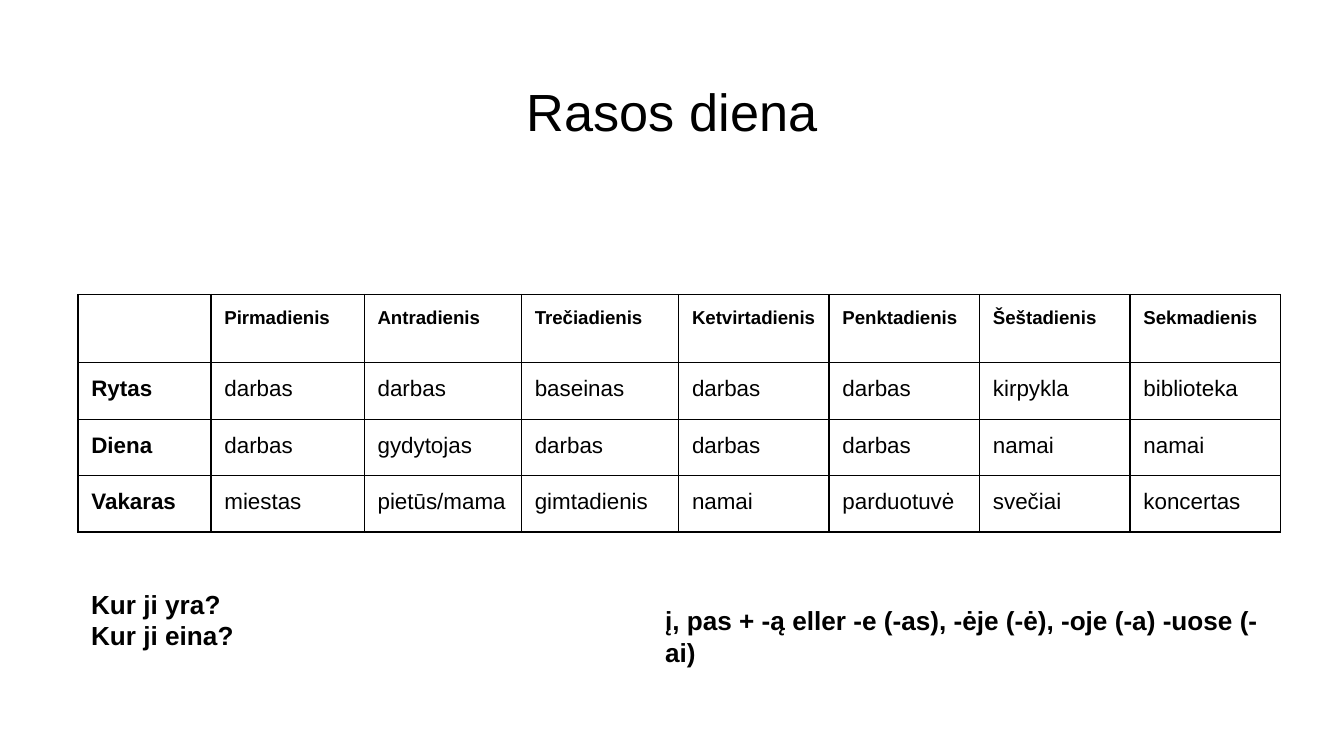
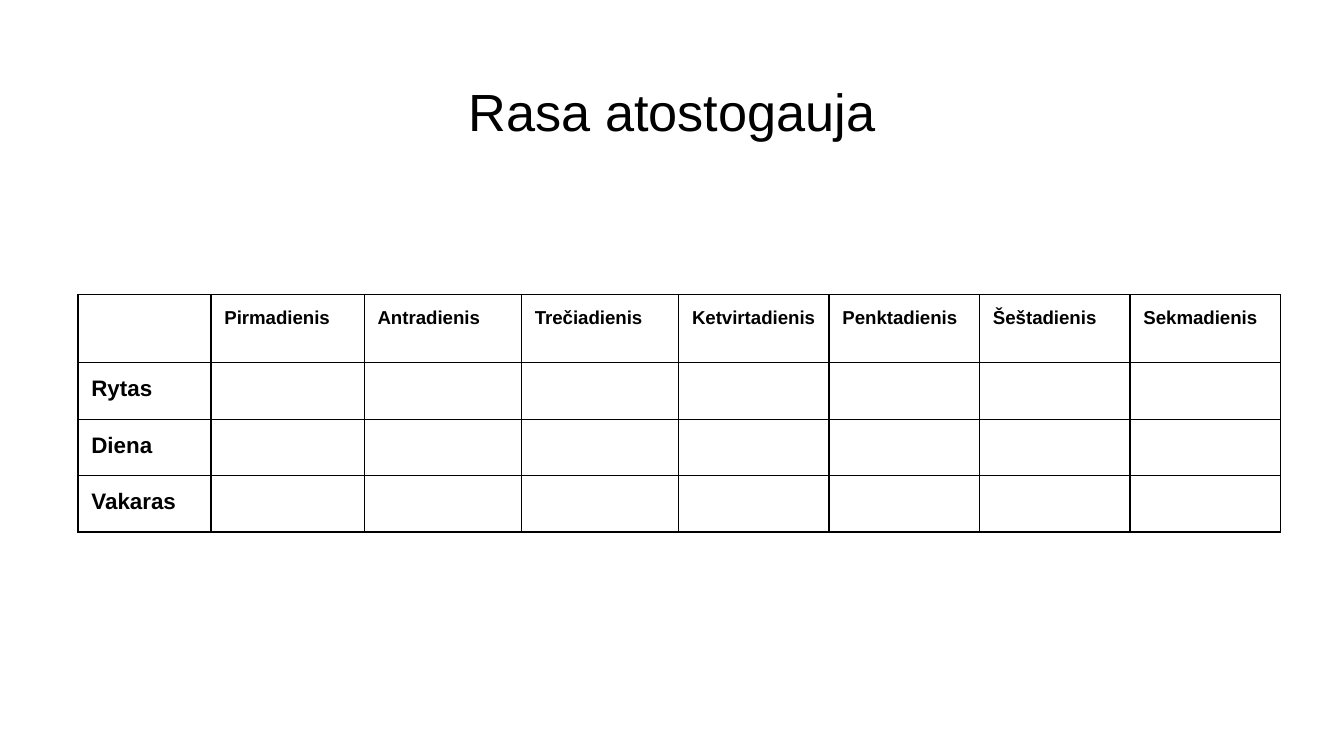
import dataclasses

import lxml.etree
import pptx
import pptx.dml.color
import pptx.enum.text
import pptx.oxml.ns
import pptx.util

Inches = pptx.util.Inches


@dataclasses.dataclass(frozen=True)
class Theme:
    font: str = "Arial"
    ink: str = "000000"
    title_size: int = 28
    question_size: int = 14
    day_size: int = 10
    cell_size: int = 12
    corner_size: int = 18
    border_width: float = 0.75
    inset: float = 0.1


THEME = Theme()

TITLE_BOX = (0.34, 0.49, 9.32, 0.63)
TABLE_BOX = (0.58, 2.19, 8.94, 1.78)
QUESTIONS_BOX = (0.58, 4.33, 8.94, 0.57)
ENDINGS_BOX = (4.85, 4.45, 4.81, 0.34)

COLUMN_WIDTHS = [0.99, 1.14, 1.17, 1.17] + [1.12] * 4
ROW_HEIGHTS = [0.51] + [0.42] * 3

DAYS = ["Pirmadienis", "Antradienis", "Trečiadienis", "Ketvirtadienis",
        "Penktadienis", "Šeštadienis", "Sekmadienis"]
TIMES = ["Rytas", "Diena", "Vakaras"]
WORK_WEEK = [
    ["darbas", "darbas", "baseinas", "darbas", "darbas", "kirpykla", "biblioteka"],
    ["darbas", "gydytojas", "darbas", "darbas", "darbas", "namai", "namai"],
    ["miestas", "pietūs/mama", "gimtadienis", "namai", "parduotuvė", "svečiai",
     "koncertas"],
]
EMPTY_WEEK = [[""] * len(DAYS) for _ in TIMES]


def format_paragraph(paragraph, size, bold=False):
    for run in paragraph.runs:
        run.font.name = THEME.font
        run.font.size = pptx.util.Pt(size)
        run.font.bold = bold
        run.font.color.rgb = pptx.dml.color.RGBColor.from_string(THEME.ink)


def set_insets(holder):
    holder.margin_left = holder.margin_right = Inches(THEME.inset)
    holder.margin_top = holder.margin_bottom = Inches(THEME.inset)


def add_text(slide, box, text, size, bold=False):
    shape = slide.shapes.add_textbox(*map(Inches, box))
    text_frame = shape.text_frame
    text_frame.word_wrap = True
    text_frame.text = text
    for paragraph in text_frame.paragraphs:
        format_paragraph(paragraph, size, bold)
    return text_frame


def add_title(slide, box, text):
    text_frame = add_text(slide, box, text, THEME.title_size)
    set_insets(text_frame)
    text_frame.paragraphs[0].alignment = pptx.enum.text.PP_ALIGN.CENTER


def add_question(slide, box, text):
    text_frame = add_text(slide, box, text, THEME.question_size, bold=True)
    text_frame.auto_size = pptx.enum.text.MSO_AUTO_SIZE.SHAPE_TO_FIT_TEXT


def add_borders(cell):
    properties = cell._tc.get_or_add_tcPr()
    qn = pptx.oxml.ns.qn
    for side in ("a:lnL", "a:lnR", "a:lnT", "a:lnB"):
        line = lxml.etree.SubElement(
            properties, qn(side), w=str(pptx.util.Pt(THEME.border_width)))
        fill = lxml.etree.SubElement(line, qn("a:solidFill"))
        lxml.etree.SubElement(fill, qn("a:srgbClr"), val=THEME.ink)


def fill_cell(cell, text, size, bold):
    set_insets(cell)
    add_borders(cell)
    cell.fill.background()
    paragraph = cell.text_frame.paragraphs[0]
    if text:
        paragraph.text = text
        format_paragraph(paragraph, size, bold)
    else:
        # An empty cell keeps its type size, so the row does not grow
        lxml.etree.SubElement(paragraph._p, pptx.oxml.ns.qn("a:endParaRPr"),
                              sz=str(size * 100))


def add_week_table(slide, box, activities):
    rows = [[""] + DAYS]
    rows += [[time] + week for time, week in zip(TIMES, activities)]
    frame = slide.shapes.add_table(len(rows), len(rows[0]), *map(Inches, box))
    table = frame.table
    table.first_row = table.horz_banding = False
    for column, width in zip(table.columns, COLUMN_WIDTHS):
        column.width = Inches(width)
    for row, height in zip(table.rows, ROW_HEIGHTS):
        row.height = Inches(height)
    for row_index, texts in enumerate(rows):
        for column_index, text in enumerate(texts):
            if row_index:
                size = THEME.cell_size
            else:
                size = THEME.day_size if column_index else THEME.corner_size
            is_heading = row_index == 0 or column_index == 0
            fill_cell(table.cell(row_index, column_index), text, size, is_heading)


def add_week_slide(presentation, title, activities):
    slide = presentation.slides.add_slide(presentation.slide_layouts[6])
    add_title(slide, TITLE_BOX, title)
    add_week_table(slide, TABLE_BOX, activities)
    return slide


def main():
    presentation = pptx.Presentation()
    # Widescreen, 16 to 9
    presentation.slide_width = Inches(10)
    presentation.slide_height = Inches(10 * 9 / 16)

    # The working week, with questions and case endings below
    slide = add_week_slide(presentation, "Rasos diena", WORK_WEEK)
    add_question(slide, QUESTIONS_BOX, "Kur ji yra?\nKur ji eina?")
    add_question(slide, ENDINGS_BOX,
                 "į, pas + -ą eller -e (-as), -ėje (-ė), -oje (-a) -uose (-ai)")

    # The holiday week, left for the pupils to fill in
    add_week_slide(presentation, "Rasa atostogauja", EMPTY_WEEK)

    presentation.save("out.pptx")


if __name__ == "__main__":
    main()
